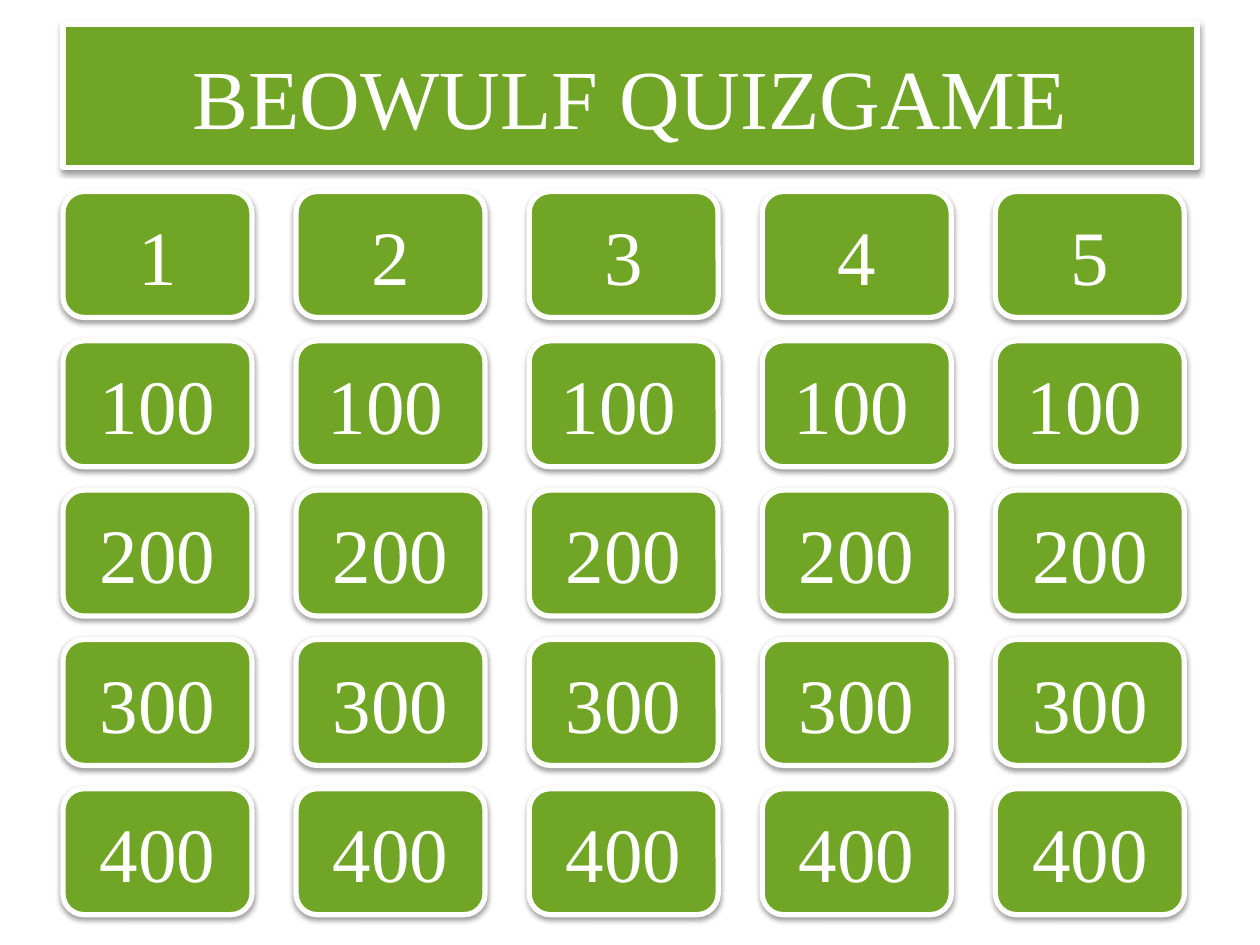
from dataclasses import dataclass

from lxml.etree import SubElement
from pptx import Presentation
from pptx.dml.color import RGBColor
from pptx.enum.shapes import MSO_SHAPE
from pptx.enum.text import MSO_ANCHOR, MSO_AUTO_SIZE, PP_ALIGN
from pptx.oxml.ns import qn
from pptx.util import Inches, Pt

TITLE = "BEOWULF QUIZGAME"
BOARD = [
    ["1", "2", "3", "4", "5"],
    ["100", "100\t", "100\t", "100\t", "100\t"],
    ["200"] * 5,
    ["300"] * 5,
    ["400"] * 5,
]


@dataclass(frozen=True)
class Theme:
    font: str = "Times New Roman"
    tile: RGBColor = RGBColor(0x70, 0xA5, 0x25)
    light: RGBColor = RGBColor(0xFF, 0xFF, 0xFF)
    shadow: str = "000000"
    title_size: int = 48
    tile_size: int = 44
    border: int = 3


THEME = Theme()
WIDTH, HEIGHT = 10, 7.5
MARGIN = WIDTH * 0.05
TITLE_TOP, TITLE_HEIGHT = 0.19, 1.14
BOARD_TOP = 1.52
COLUMN_STEP, ROW_STEP = 1.85, 1.185
TILE_WIDTH, TILE_HEIGHT = 1.5, 1


def add_shadow(box):
    effects = SubElement(box.element.spPr, qn("a:effectLst"))
    shadow = SubElement(effects, qn("a:outerShdw"), blurRad=str(Pt(3.15)),
                        dist=str(Pt(1.57)), dir="5400000", rotWithShape="0")
    color = SubElement(shadow, qn("a:srgbClr"), val=THEME.shadow)
    SubElement(color, qn("a:alpha"), val="38000")


def format_box(box, text, *, size):
    box.fill.solid()
    box.fill.fore_color.rgb = THEME.tile
    box.line.color.rgb = THEME.light
    box.line.width = Pt(THEME.border)
    add_shadow(box)
    frame = box.text_frame
    frame.word_wrap = True
    frame.auto_size = MSO_AUTO_SIZE.NONE
    frame.vertical_anchor = MSO_ANCHOR.MIDDLE
    para = frame.paragraphs[0]
    para.alignment = PP_ALIGN.CENTER
    span = para.add_run()
    span.text = text
    span.font.name = THEME.font
    span.font.size = Pt(size)
    span.font.color.rgb = THEME.light


def add_title(page):
    box = page.shapes.title
    box.left, box.top = Inches(MARGIN), Inches(TITLE_TOP)
    box.width, box.height = Inches(WIDTH - 2 * MARGIN), Inches(TITLE_HEIGHT)
    geometry = SubElement(box.element.spPr, qn("a:prstGeom"), prst="roundRect")
    SubElement(geometry, qn("a:avLst"))
    format_box(box, TITLE, size=THEME.title_size)


def add_board(page):
    for row, values in enumerate(BOARD):
        for column, value in enumerate(values):
            box = page.shapes.add_shape(
                MSO_SHAPE.ROUNDED_RECTANGLE,
                Inches(MARGIN + column * COLUMN_STEP),
                Inches(BOARD_TOP + row * ROW_STEP),
                Inches(TILE_WIDTH), Inches(TILE_HEIGHT))
            format_box(box, value, size=THEME.tile_size)


def main():
    deck = Presentation()
    deck.slide_width, deck.slide_height = Inches(WIDTH), Inches(HEIGHT)
    page = deck.slides.add_slide(deck.slide_layouts[5])
    add_title(page)
    add_board(page)
    deck.save("out.pptx")


if __name__ == "__main__":
    main()
